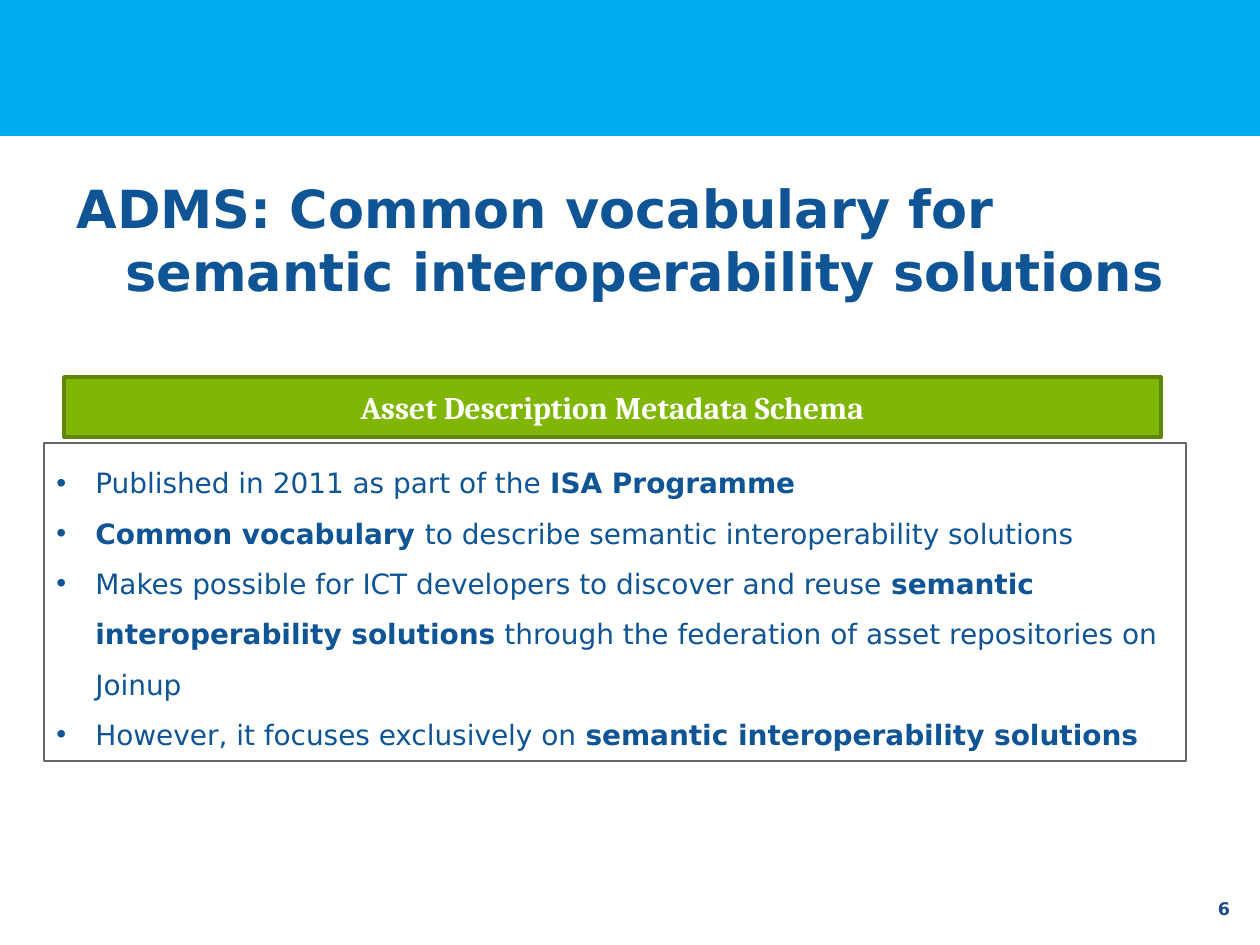
from lxml import etree
from pptx import Presentation
from pptx.dml.color import RGBColor
from pptx.enum.shapes import MSO_SHAPE
from pptx.enum.text import MSO_ANCHOR, MSO_AUTO_SIZE, PP_ALIGN
from pptx.oxml.ns import qn
from pptx.util import Inches, Pt

RECT = MSO_SHAPE.RECTANGLE
TOP, MIDDLE = MSO_ANCHOR.TOP, MSO_ANCHOR.MIDDLE
LEFT, CENTER = PP_ALIGN.LEFT, PP_ALIGN.CENTER
FIXED = MSO_AUTO_SIZE.NONE
SCALE = Inches(1) / 126
SANS, SERIF = "DejaVu Sans", "Cambria"
BLUE, NAVY, SKY, WHITE = "0F5494", "1D4D8D", "00AEF0", "FFFFFF"
GREEN, MOSS, GREY = "80B606", "5F8704", "666666"
POINTS = [
    "Published in 2011 as part of the *ISA Programme*",
    "*Common vocabulary *to describe semantic interoperability solutions",
    "Makes possible for ICT developers to discover and reuse "
    "*semantic interoperability solutions* through the federation of "
    "asset repositories on Joinup",
    "However, it focuses exclusively on *semantic interoperability solutions*",
]


def px(count):
    """Turn pixels into EMU."""
    return round(count * SCALE)


def color(code):
    """Turn a hex string into a colour."""
    return RGBColor.from_string(code)


class Deck:
    """Holds the style and the current slide."""

    def __init__(self):
        """Start a deck with one title-only slide."""
        self.show = Presentation()
        self.show.slide_width, self.show.slide_height = px(1260), px(945)
        self.slide = self.show.slides.add_slide(self.show.slide_layouts[5])

    def style(self, para, size, code, face=SANS, bold=None, align=LEFT):
        """Set the font and alignment of a paragraph."""
        para.alignment = align
        font = para.font
        font.size, font.name, font.bold = Pt(size), face, bold
        font.color.rgb = color(code)

    def indent(self, para, depth):
        """Give a paragraph a hanging indent."""
        props = para._p.get_or_add_pPr()
        props.set("marL", str(px(depth)))
        props.set("indent", str(-px(depth)))
        return props

    def title(self, text, x, y, w, h):
        """Place and format the title."""
        shape = self.slide.shapes.title
        shape.left, shape.top, shape.width, shape.height = map(px, (x, y, w, h))
        frame = shape.text_frame
        frame.text = text
        frame.auto_size, frame.vertical_anchor = FIXED, MIDDLE
        para = frame.paragraphs[0]
        self.indent(para, 49)
        self.style(para, 30, BLUE, bold=True)

    def box(self, x, y, w, h, fill=None, line=None, width=1):
        """Draw a rectangle."""
        shape = self.slide.shapes.add_shape(RECT, px(x), px(y), px(w), px(h))
        shape.shadow.inherit = False
        if fill:
            shape.fill.solid()
            shape.fill.fore_color.rgb = color(fill)
        else:
            shape.fill.background()
        if line:
            shape.line.color.rgb = color(line)
            shape.line.width = Pt(width)
        else:
            shape.line.fill.background()
        return shape

    def label(self, shape, text, size, code, face=SANS):
        """Write one bold centred line in a shape."""
        frame = shape.text_frame
        frame.text, frame.vertical_anchor = text, MIDDLE
        self.style(frame.paragraphs[0], size, code, face, True, CENTER)

    def bullets(self, shape, lines):
        """Fill a shape with bullets, with bold between asterisks."""
        frame = shape.text_frame
        frame.word_wrap, frame.vertical_anchor = True, TOP
        for row, line in enumerate(lines):
            para = frame.add_paragraph() if row else frame.paragraphs[0]
            para.line_spacing = 1.5
            props = self.indent(para, 39)
            etree.SubElement(props, qn("a:buFont")).set("typeface", "Arial")
            etree.SubElement(props, qn("a:buChar")).set("char", "•")
            self.style(para, 16, BLUE)
            for turn, part in enumerate(line.split("*")):
                if part:
                    run = para.add_run()
                    run.text, run.font.bold = part, turn % 2 == 1


def main():
    """Build and save the slide."""
    deck = Deck()
    deck.box(0, 0, 1260, 136, SKY)
    deck.title("ADMS: Common vocabulary for semantic interoperability solutions",
               64, 175, 1160, 129)
    deck.bullets(deck.box(44, 443, 1142, 318, line=GREY, width=0.75), POINTS)
    head = deck.box(64, 377, 1097, 60, GREEN, MOSS, 2)
    deck.label(head, "Asset Description Metadata Schema", 18, WHITE, SERIF)
    deck.label(deck.box(1199, 884, 50, 50, WHITE), "6", 10, NAVY)
    deck.show.save("out.pptx")


if __name__ == "__main__":
    main()
